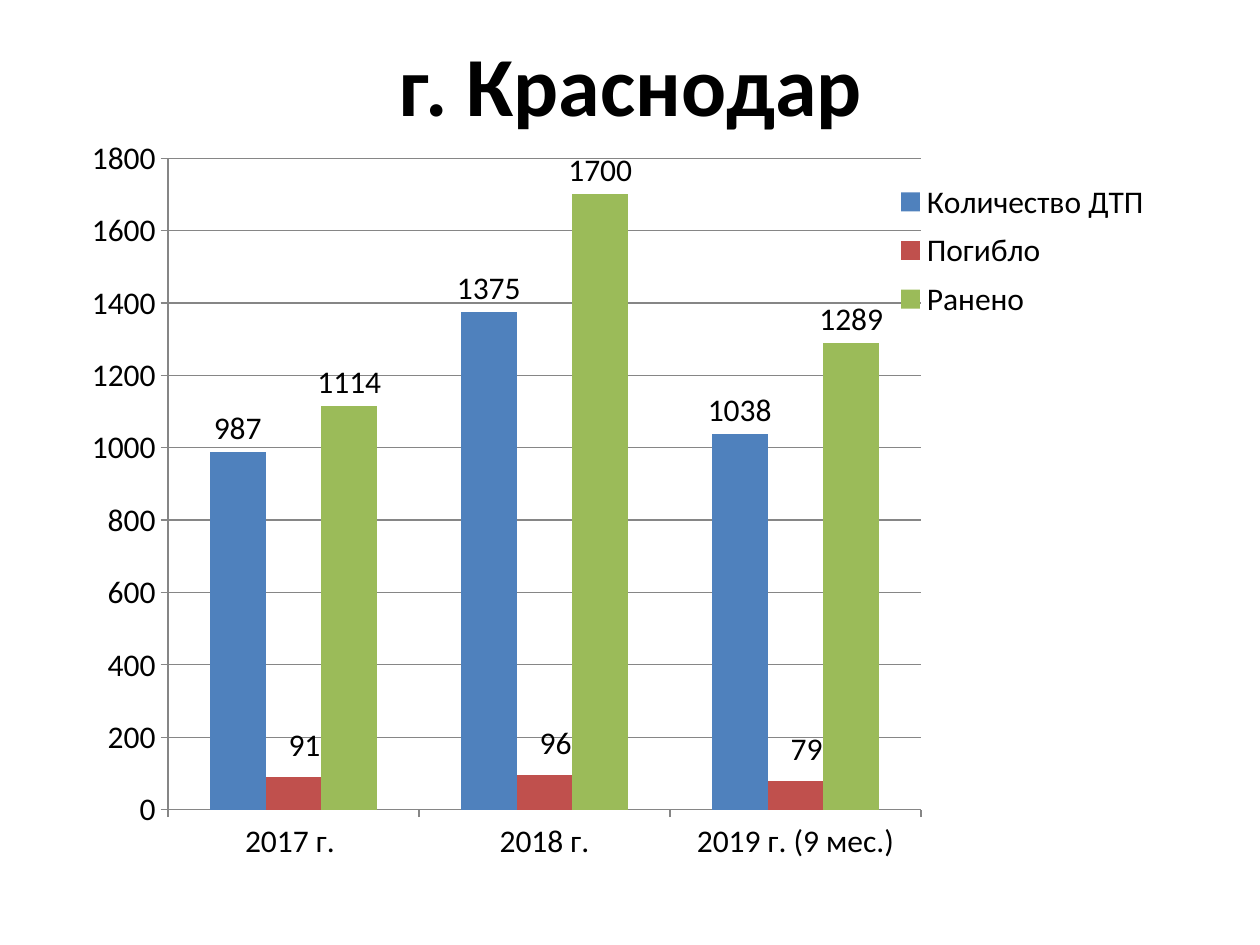
from dataclasses import dataclass

from lxml import etree
from pptx import Presentation
from pptx.chart.data import CategoryChartData
from pptx.dml.color import RGBColor
from pptx.enum.chart import XL_CHART_TYPE, XL_LABEL_POSITION, XL_LEGEND_POSITION, XL_TICK_MARK
from pptx.enum.text import MSO_ANCHOR, PP_ALIGN
from pptx.oxml.ns import qn
from pptx.util import Inches, Pt

COLUMNS = XL_CHART_TYPE.COLUMN_CLUSTERED
ABOVE_BAR = XL_LABEL_POSITION.OUTSIDE_END
RIGHT = XL_LEGEND_POSITION.RIGHT
TICK_OUT = XL_TICK_MARK.OUTSIDE
MIDDLE = MSO_ANCHOR.MIDDLE
CENTER = PP_ALIGN.CENTER

YEARS = ["2017 г. ", "2018 г.", "2019 г. (9 мес.)"]
ACCIDENTS = {
    "Количество ДТП": [987, 1375, 1038],
    "Погибло": [91, 96, 79],
    "Ранено": [1114, 1700, 1289],
}
DEATHS = 1
DEATH_LABEL_SHIFT = (0.01, -0.01)
PLOT_AREA = (0.085, 0.031, 0.683, 0.875)
LEGEND_AREA = (0.74, 0.05, 0.24, 0.21)


@dataclass(frozen=True)
class Theme:
    """Colours, font and type sizes of the slide."""

    font: str = "Calibri"
    title_size: int = 48
    chart_size: int = 18
    text: str = "000000"
    axis: str = "868686"
    series: tuple = ("4F81BD", "C0504D", "9BBB59")


class SlideBuilder:
    """Places elements on a slide by shares of its size."""

    def __init__(self, deck, theme):
        self.deck = deck
        self.theme = theme
        self.slide = deck.slides.add_slide(deck.slide_layouts[6])

    def area(self, left, top, width, height):
        """Turn shares of the slide into lengths."""
        across, down = self.deck.slide_width, self.deck.slide_height
        return int(left * across), int(top * down), int(width * across), int(height * down)

    def style(self, font, size, bold=False):
        """Apply the theme's type to a font."""
        font.name = self.theme.font
        font.size = Pt(size)
        font.bold = bold
        font.color.rgb = RGBColor.from_string(self.theme.text)

    def title(self, wording, *shares):
        """Add a bold centred heading."""
        frame = self.slide.shapes.add_textbox(*self.area(*shares)).text_frame
        frame.word_wrap = True
        frame.vertical_anchor = MIDDLE
        heading = frame.paragraphs[0]
        heading.alignment = CENTER
        run = heading.add_run()
        run.text = wording
        self.style(run.font, self.theme.title_size, bold=True)

    def column_chart(self, categories, values, *shares):
        """Add a clustered column chart with value labels."""
        data = CategoryChartData()
        data.categories = categories
        for name, counts in values.items():
            data.add_series(name, counts)
        chart = self.slide.shapes.add_chart(COLUMNS, *self.area(*shares), data).chart
        chart.has_title = False
        self.style(chart.font, self.theme.chart_size)
        chart.has_legend = True
        chart.legend.position = RIGHT
        chart.legend.include_in_layout = False
        plot = chart.plots[0]
        plot.gap_width = 150
        plot.overlap = 0
        plot.vary_by_categories = False
        for series, color in zip(plot.series, self.theme.series):
            series.format.fill.solid()
            series.format.fill.fore_color.rgb = RGBColor.from_string(color)
            series.data_labels.show_value = True
            series.data_labels.position = ABOVE_BAR
        for axis in (chart.category_axis, chart.value_axis):
            axis.major_tick_mark = TICK_OUT
            self.hairline(axis.format.line)
        chart.value_axis.minimum_scale = 0
        chart.value_axis.maximum_scale = 1800
        chart.value_axis.major_unit = 200
        chart.value_axis.has_major_gridlines = True
        self.hairline(chart.value_axis.major_gridlines.format.line)
        return chart

    def hairline(self, line):
        """Draw an axis or grid line thin and grey."""
        line.width = Pt(0.75)
        line.color.rgb = RGBColor.from_string(self.theme.axis)

    def arrange(self, parent, index, shares, inner=False, fixed=True):
        """Give a chart element a manual layout in shares of the chart."""
        for automatic in parent.findall(qn("c:layout")):
            parent.remove(automatic)
        layout = etree.Element(qn("c:layout"))
        parent.insert(index, layout)
        manual = etree.SubElement(layout, qn("c:manualLayout"))
        settings = [("layoutTarget", "inner")] if inner else []
        if fixed:
            settings += [("xMode", "edge"), ("yMode", "edge")]
        settings += zip("xywh", shares)
        for tag, value in settings:
            etree.SubElement(manual, qn(f"c:{tag}")).set("val", str(value))

    def shift_labels(self, chart, series_index, shift):
        """Nudge the value labels of one series."""
        series = chart.plots[0].series[series_index]
        for index in range(len(series.values)):
            series.points[index].data_label.position = ABOVE_BAR
        for label in chart.element.iter(qn("c:dLbl")):
            self.arrange(label, 1, shift, fixed=False)


def main():
    """Build the accident statistics slide."""
    deck = Presentation()
    deck.slide_width, deck.slide_height = Inches(10), Inches(7.5)
    builder = SlideBuilder(deck, Theme())
    builder.title(" г. Краснодар", 0.043, 0.004, 0.9, 0.167)
    chart = builder.column_chart(YEARS, ACCIDENTS, 0.059, 0.143, 0.875, 0.788)
    builder.arrange(next(chart.element.iter(qn("c:plotArea"))), 0, PLOT_AREA, inner=True)
    builder.arrange(next(chart.element.iter(qn("c:legend"))), 1, LEGEND_AREA)
    builder.shift_labels(chart, DEATHS, DEATH_LABEL_SHIFT)
    deck.save("out.pptx")


if __name__ == "__main__":
    main()
